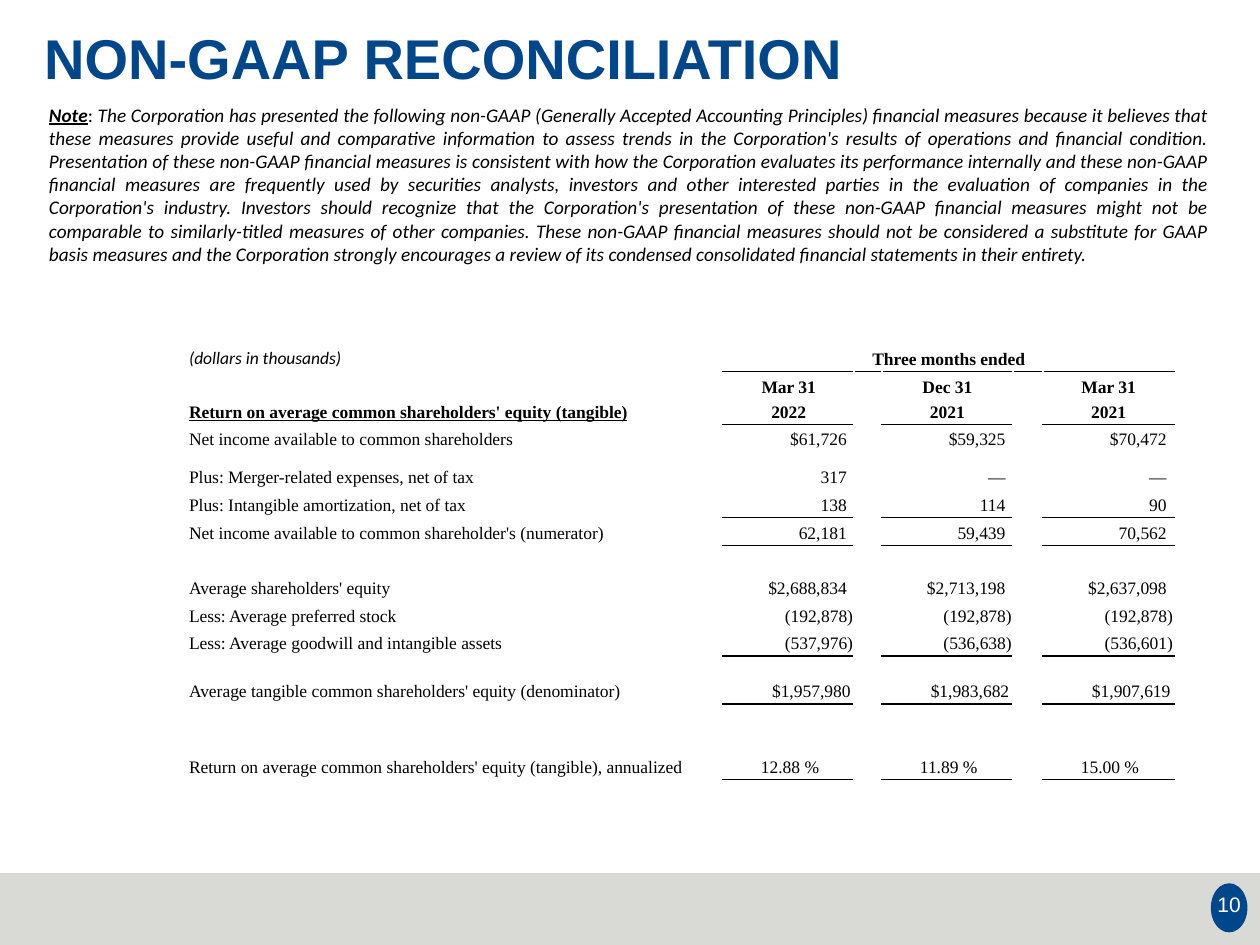
from dataclasses import dataclass
from lxml.etree import SubElement
from pptx import Presentation
from pptx.dml.color import RGBColor
from pptx.enum.shapes import MSO_SHAPE
from pptx.enum.text import MSO_ANCHOR, MSO_AUTO_SIZE, PP_ALIGN
from pptx.oxml.ns import qn
from pptx.util import Inches, Pt


@dataclass(frozen=True)
class Theme:
    navy: str = "004689"
    badge: str = "00468B"
    band: str = "D9D9D6"
    black: str = "000000"
    white: str = "FFFFFF"
    head: str = "Arial"
    note: str = "Calibri"
    serif: str = "Times New Roman"
    big: int = 32
    body: int = 11
    page: int = 12
    cell: int = 10
    rule: int = 1


T = Theme()

NOTE = [
    "The Corporation has presented the following non-GAAP (Generally Accepted Accounting Principles) "
    "financial measures because it believes that these measures provide useful and comparative "
    "information to assess trends in the Corporation's results of operations and financial condition.",
    "Presentation of these non-GAAP financial measures is consistent with how the Corporation evaluates "
    "its performance internally and these non-GAAP financial measures are frequently used by securities "
    "analysts, investors and other interested parties in the evaluation of companies in the "
    "Corporation's industry.",
    "Investors should recognize that the Corporation's presentation of these non-GAAP financial "
    "measures might not be comparable to similarly-titled measures of other companies.",
    "These non-GAAP financial measures should not be considered a substitute for GAAP basis "
    "measures and the Corporation strongly encourages a review of its condensed consolidated financial "
    "statements in their entirety.",
]

ROWS = [
    ("(dollars in thousands)", "Three months ended"),
    ("", "Mar 31", "Dec 31", "Mar 31"),
    ("Return on average common shareholders' equity (tangible)", "2022", "2021", "2021"),
    ("Net income available to common shareholders", "$61,726", "$59,325", "$70,472"),
    ("Plus: Merger-related expenses, net of tax", "317", "—", "—"),
    ("Plus: Intangible amortization, net of tax", "138", "114", "90"),
    ("Net income available to common shareholder's (numerator)", "62,181", "59,439", "70,562"),
    (),
    ("Average shareholders' equity", "$2,688,834", "$2,713,198", "$2,637,098"),
    ("Less: Average preferred stock", "(192,878)", "(192,878)", "(192,878)"),
    ("Less: Average goodwill and intangible assets", "(537,976)", "(536,638)", "(536,601)"),
    ("Average tangible common shareholders' equity (denominator)",
     "$1,957,980", "$1,983,682", "$1,907,619"),
    (),
    ("Return on average common shareholders' equity (tangible), annualized",
     "12.88 %", "11.89 %", "15.00 %"),
    (),
]
COLS = [3.7, 0.57, 1.04, 0.22, 1.04, 0.24, 1.04]
TALL = {2: 0.2, 4: 0.3, 11: 0.38, 13: 0.38}
VALUES = (2, 4, 6)
RULED = (2, 5, 6, 10, 11, 13)
WIDE = (2, 3, 5, 6, 8, 10, 11, 13)
HEADS = 3
TOTAL = 11
RATIO = 13


def add_run(para, text, face, size, color, bold=False, italic=False, line=False):
    run = para.add_run()
    run.text = text
    font = run.font
    font.name, font.size = face, Pt(size)
    font.bold, font.italic, font.underline = bold, italic, line
    font.color.rgb = RGBColor.from_string(color)


def set_frame(shape, box, anchor=MSO_ANCHOR.TOP):
    shape.left, shape.top, shape.width, shape.height = map(Inches, box)
    frame = shape.text_frame
    frame.word_wrap = True
    frame.auto_size = MSO_AUTO_SIZE.NONE
    frame.vertical_anchor = anchor
    frame.margin_left = frame.margin_right = frame.margin_bottom = Inches(0.1)
    frame.margin_top = Inches(0.06)
    return frame.paragraphs[0]


def add_text(slide, box, align, anchor=MSO_ANCHOR.TOP):
    para = set_frame(slide.shapes.add_textbox(*map(Inches, box)), box, anchor)
    para.alignment = align
    return para


def add_block(slide, kind, box, color):
    shape = slide.shapes.add_shape(kind, *map(Inches, box))
    shape.shadow.inherit = False
    shape.fill.solid()
    shape.fill.fore_color.rgb = RGBColor.from_string(color)
    shape.line.fill.background()


def is_ruled(row, col):
    return (row == 0 and col >= VALUES[0]) or (row in RULED and col in VALUES)


def set_edges(cell, row, col):
    props = cell._tc.get_or_add_tcPr()
    dark = {"lnT": is_ruled(row - 1, col), "lnB": is_ruled(row, col)}
    for side in ("lnL", "lnR", "lnT", "lnB"):
        edge = SubElement(props, qn(f"a:{side}"), w=str(Pt(T.rule)))
        fill = SubElement(edge, qn("a:solidFill"))
        SubElement(fill, qn("a:srgbClr"), val=T.black if dark.get(side) else T.white)


def clear_cell(cell, row, col):
    set_edges(cell, row, col)
    cell.fill.background()
    cell.vertical_anchor = MSO_ANCHOR.BOTTOM
    cell.margin_left = cell.margin_right = Inches(0.03)
    cell.margin_top, cell.margin_bottom = 0, Inches(0.02)


def fill_label(cell, row, text):
    note = row == 0
    add_run(cell.text_frame.paragraphs[0], text, T.note if note else T.serif, T.cell, T.black,
            bold=row == 2, italic=note, line=row == 2)


def fill_value(cell, row, text):
    para = cell.text_frame.paragraphs[0]
    mid = row < HEADS or row == RATIO
    para.alignment = PP_ALIGN.CENTER if mid else PP_ALIGN.RIGHT
    if row == RATIO or text.endswith(")"):
        cell.margin_right = Inches(0.01)
    elif not mid and row != TOTAL:
        cell.margin_right = Inches(0.06)
    add_run(para, text, T.serif, T.cell, T.black, bold=row < HEADS)


def add_grid(slide):
    tall = [TALL.get(i, 0.22) for i in range(len(ROWS))]
    box = (1.47, 2.73, sum(COLS), sum(tall))
    grid = slide.shapes.add_table(len(ROWS), len(COLS), *map(Inches, box)).table
    grid.first_row = grid.horz_banding = False
    for col, width in zip(grid.columns, COLS):
        col.width = Inches(width)
    for i, (row, height) in enumerate(zip(grid.rows, tall)):
        row.height = Inches(height)
        for j, cell in enumerate(row.cells):
            clear_cell(cell, i, j)
        for j, text in zip((0, *VALUES), ROWS[i]):
            if text:
                fill = fill_value if j else fill_label
                fill(grid.cell(i, j), i, text)
        for cell in row.cells:
            para = cell.text_frame.paragraphs[0]
            if not para.runs:
                SubElement(para._p, qn("a:endParaRPr"), sz=str(T.cell * 100))
    grid.cell(0, 2).merge(grid.cell(0, 6))
    for i in WIDE:
        grid.cell(i, 0).merge(grid.cell(i, 1))


def main():
    deck = Presentation()
    deck.slide_width, deck.slide_height = Inches(10), Inches(7.5)
    slide = deck.slides.add_slide(deck.slide_layouts[5])
    add_block(slide, MSO_SHAPE.RECTANGLE, (0, 6.93, 10, 0.57), T.band)
    add_block(slide, MSO_SHAPE.OVAL, (9.61, 7.01, 0.29, 0.39), T.badge)
    title = set_frame(slide.shapes.title, (0.25, 0.19, 9.67, 1.14))
    title.alignment, title.line_spacing = PP_ALIGN.LEFT, 0.9
    add_run(title, "NON-GAAP RECONCILIATION", T.head, T.big, T.navy, bold=True)
    note = add_text(slide, (0.29, 0.76, 9.41, 1.4), PP_ALIGN.JUSTIFY)
    add_run(note, "Note", T.note, T.body, T.black, bold=True, italic=True, line=True)
    add_run(note, ": ", T.note, T.body, T.black)
    add_run(note, " ".join(NOTE), T.note, T.body, T.black, italic=True)
    page = add_text(slide, (9.52, 7, 0.47, 0.39), PP_ALIGN.CENTER, MSO_ANCHOR.MIDDLE)
    add_run(page, "10", T.head, T.page, T.white)
    add_grid(slide)
    deck.save("out.pptx")


if __name__ == "__main__":
    main()
